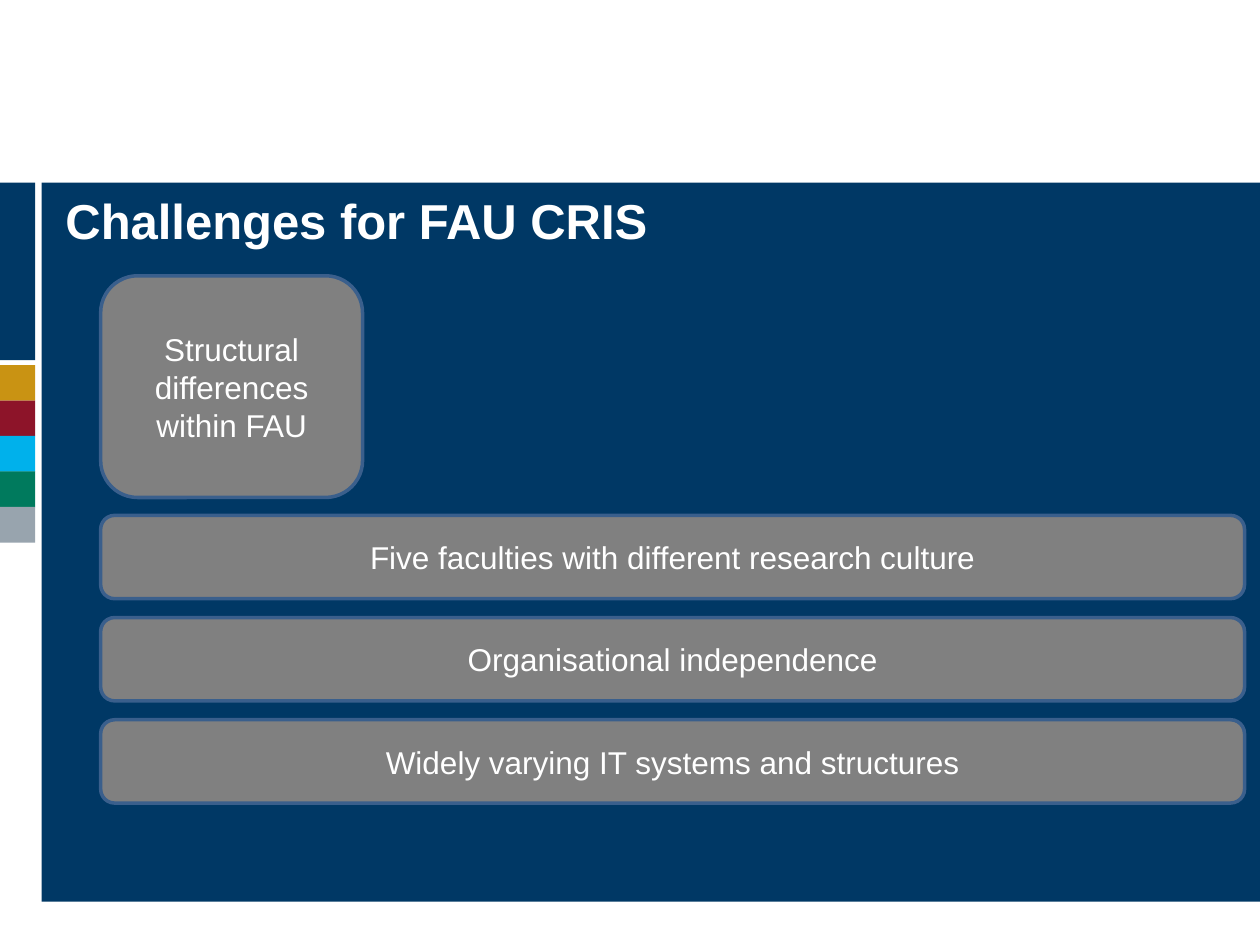
from pptx import Presentation
from pptx.dml.color import RGBColor
from pptx.enum.shapes import MSO_SHAPE
from pptx.enum.text import MSO_ANCHOR, PP_ALIGN
from pptx.util import Cm, Pt

RECT = MSO_SHAPE.RECTANGLE
ROUNDED = MSO_SHAPE.ROUNDED_RECTANGLE
MIDDLE = MSO_ANCHOR.MIDDLE
CENTER = PP_ALIGN.CENTER

FONT = "Arial"
COLORS = {
    "navy": "003865",
    "gold": "C99313",
    "red": "8D1429",
    "cyan": "00B1EB",
    "green": "007A5D",
    "silver": "98A4AE",
    "box": "808080",
    "outline": "3A5F8C",
    "white": "FFFFFF",
}
STRIPES = ["gold", "red", "cyan", "green", "silver"]
CHALLENGES = [
    "Five faculties with different research culture",
    "Organisational independence",
    "Widely varying IT systems and structures",
]


def rgb(name):
    return RGBColor.from_string(COLORS[name])


def set_text(tf, text, size, bold=False):
    tf.word_wrap = True
    p = tf.paragraphs[0]
    p.text = text
    font = p.runs[0].font
    font.name = FONT
    font.size = Pt(size)
    font.bold = bold
    font.color.rgb = rgb("white")
    return p


def add_block(s, kind, x, y, w, h, color):
    sp = s.shapes.add_shape(kind, Cm(x), Cm(y), Cm(w), Cm(h))
    sp.shadow.inherit = False
    sp.fill.solid()
    sp.fill.fore_color.rgb = rgb(color)
    sp.line.fill.background()
    return sp


def add_box(s, x, y, w, h, text):
    sp = add_block(s, ROUNDED, x, y, w, h, "box")
    sp.line.color.rgb = rgb("outline")
    sp.line.width = Pt(2)
    sp.text_frame.vertical_anchor = MIDDLE
    set_text(sp.text_frame, text, 18).alignment = CENTER


def add_title(s, text):
    tf = s.shapes.add_textbox(Cm(1.32), Cm(3.89), Cm(23.8), Cm(1.32)).text_frame
    tf.margin_left = tf.margin_right = tf.margin_top = tf.margin_bottom = 0
    set_text(tf, text, 28, bold=True).line_spacing = Pt(32)


def main():
    prs = Presentation()
    prs.slide_width, prs.slide_height = Cm(25.4), Cm(19.05)
    s = prs.slides.add_slide(prs.slide_layouts[6])

    for i, color in enumerate(STRIPES):
        add_block(s, RECT, 0, 7.36 + i * 0.715, 0.71, 0.72, color)
    add_block(s, RECT, 0, 3.68, 0.71, 3.58, "navy")
    add_block(s, RECT, 0.84, 3.68, 24.56, 14.5, "navy")

    add_title(s, "Challenges for FAU CRIS")
    add_box(s, 2.03, 5.56, 5.28, 4.47, "Structural differences within FAU")
    for i, text in enumerate(CHALLENGES):
        add_box(s, 2.03, 10.39 + i * 2.06, 23.06, 1.68, text)

    prs.save("out.pptx")


if __name__ == "__main__":
    main()
